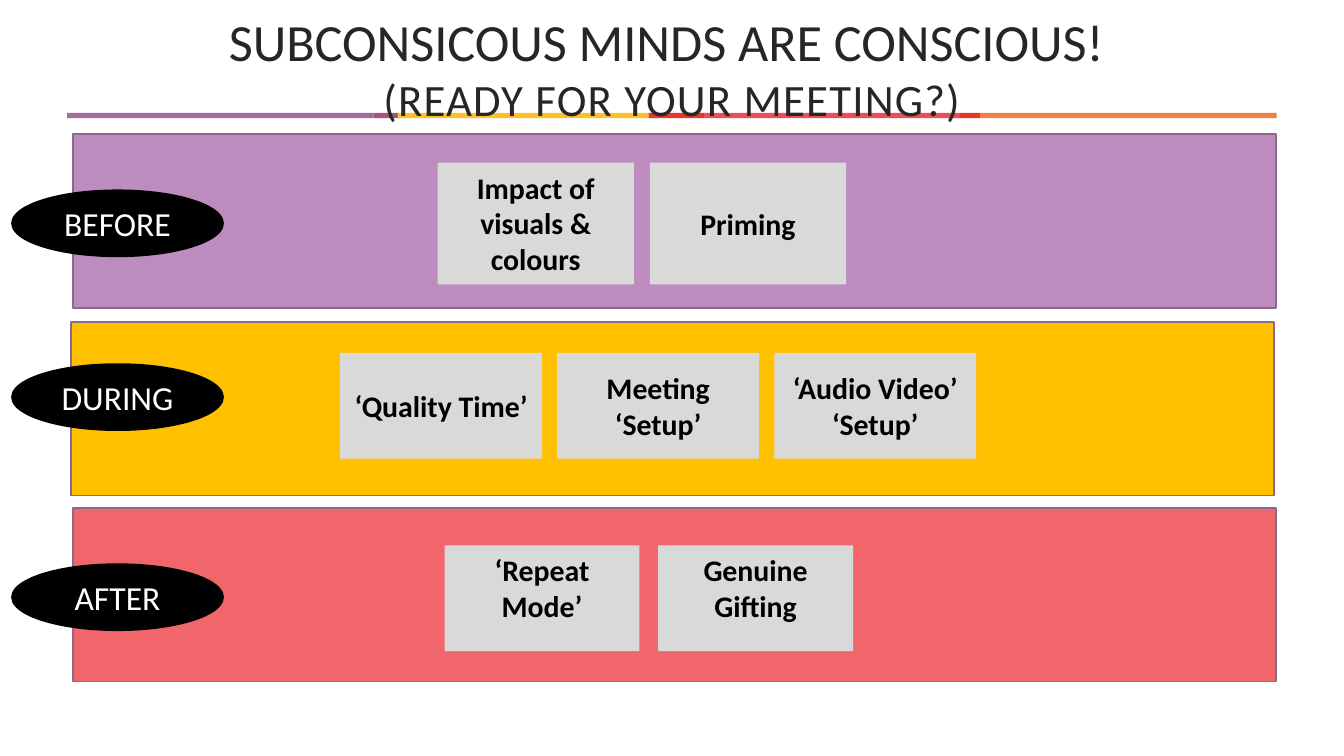
import pptx
import pptx.util
import pptx.dml.color
import pptx.enum.shapes
import pptx.enum.text

Pt = pptx.util.Pt
RGB = pptx.dml.color.RGBColor
Kind = pptx.enum.shapes.MSO_SHAPE
Anchor = pptx.enum.text.MSO_ANCHOR
Align = pptx.enum.text.PP_ALIGN

BLACK = RGB(0x00, 0x00, 0x00)
WHITE = RGB(0xFF, 0xFF, 0xFF)
DARK = RGB(0x26, 0x26, 0x26)
GREY = RGB(0xD9, 0xD9, 0xD9)
EDGE = RGB(0x8C, 0x68, 0x8D)
LILAC = RGB(0xBD, 0x8C, 0xBF)
GOLD = RGB(0xFF, 0xC0, 0x00)
CORAL = RGB(0xF1, 0x66, 0x6A)
PLUM = RGB(0xA2, 0x6D, 0x9D)
WINE = RGB(0xA6, 0x54, 0x7B)
AMBER = RGB(0xFD, 0xC1, 0x25)
RED = RGB(0xE5, 0x37, 0x2A)
ROSE = RGB(0xE9, 0x4F, 0x59)
FLAME = RGB(0xE5, 0x37, 0x27)
RUST = RGB(0xF1, 0x80, 0x40)


def write(frame, text, size=16, color=BLACK, bold=False, anchor=Anchor.MIDDLE,
          wrap=True, track=0):
    """Add a centred run to the frame's first paragraph."""
    frame.word_wrap = wrap
    frame.vertical_anchor = anchor
    para = frame.paragraphs[0]
    para.alignment = Align.CENTER
    run = para.add_run()
    run.text = text
    font = run.font
    font.name, font.size, font.bold = "Calibri", Pt(size), bold
    font.color.rgb = color
    if track:  # letter spacing, in hundredths of a point
        run._r.get_or_add_rPr().set("spc", str(track))


class Board:
    def __init__(self, slide):
        self.slide = slide

    def shape(self, kind, box, fill, line=None):
        shape = self.slide.shapes.add_shape(kind, *map(Pt, box))
        shape.shadow.inherit = False
        shape.fill.solid()
        shape.fill.fore_color.rgb = fill
        if line is None:
            shape.line.fill.background()
        else:
            shape.line.color.rgb = line
            shape.line.width = Pt(1)
        return shape

    def title(self, box, head, sub):
        frame = self.slide.shapes.add_textbox(*map(Pt, box)).text_frame
        frame.margin_top = frame.margin_bottom = 0
        write(frame, head, size=28, color=DARK)
        frame.paragraphs[0].add_line_break()
        write(frame, sub, size=24, color=DARK, track=65)

    def stripe(self, top, high, edges, fills):
        for left, right, fill in zip(edges, edges[1:], fills):
            self.shape(Kind.RECTANGLE, (left, top, right - left, high), fill)

    def band(self, left, top, fill):
        self.shape(Kind.RECTANGLE, (left, top, 644.4, 92.9), fill, EDGE)

    def tile(self, box, text, **form):
        shape = self.shape(Kind.RECTANGLE, box, GREY)
        write(shape.text_frame, text, bold=True, **form)

    def label(self, top, text):
        shape = self.shape(Kind.OVAL, (6.5, top, 113, 35.3), BLACK, BLACK)
        write(shape.text_frame, text, size=18, color=WHITE)


def main():
    deck = pptx.Presentation()
    deck.slide_width, deck.slide_height = Pt(720), Pt(405)
    board = Board(deck.slides.add_slide(deck.slide_layouts[6]))

    # Coloured rule and title
    board.stripe(60.5, 2.9, (36, 200.2, 213.2, 347.5, 377.2, 514.2, 525, 684),
                 (PLUM, WINE, AMBER, RED, ROSE, FLAME, RUST))
    board.title((36, 4, 648, 64), "SUBCONSICOUS MINDS ARE CONSCIOUS! ",
                "(READY FOR YOUR MEETING?)")

    # Bands: left, top, fill, label, label top
    bands = (
        (39, 72, LILAC, "BEFORE", 102),
        (38, 172.6, GOLD, "DURING", 195.1),
        (39, 272.2, CORAL, "AFTER", 302.3),
    )
    for left, top, fill, _, _ in bands:
        board.band(left, top, fill)

    # Tiles: left, top, width, height, step, then text and format
    rows = (
        (234.4, 87.2, 105.2, 65.2, 113.7,
         (("Impact of visuals & colours", {"anchor": Anchor.TOP}),
          ("Priming", {"wrap": False}))),
        (182.2, 189, 108.2, 56.8, 116.3,
         (("‘Quality Time’", {}), ("Meeting ‘Setup’", {}),
          ("‘Audio Video’ ‘Setup’", {}))),
        (238.2, 292.2, 104.4, 56.6, 114.4,
         (("‘Repeat Mode’", {"anchor": Anchor.TOP}),
          ("Genuine Gifting", {"anchor": Anchor.TOP}))),
    )
    for left, top, wide, high, step, tiles in rows:
        for col, (text, form) in enumerate(tiles):
            board.tile((left + col * step, top, wide, high), text, **form)

    # Labels
    for _, _, _, text, top in bands:
        board.label(top, text)

    deck.save("out.pptx")


if __name__ == "__main__":
    main()
